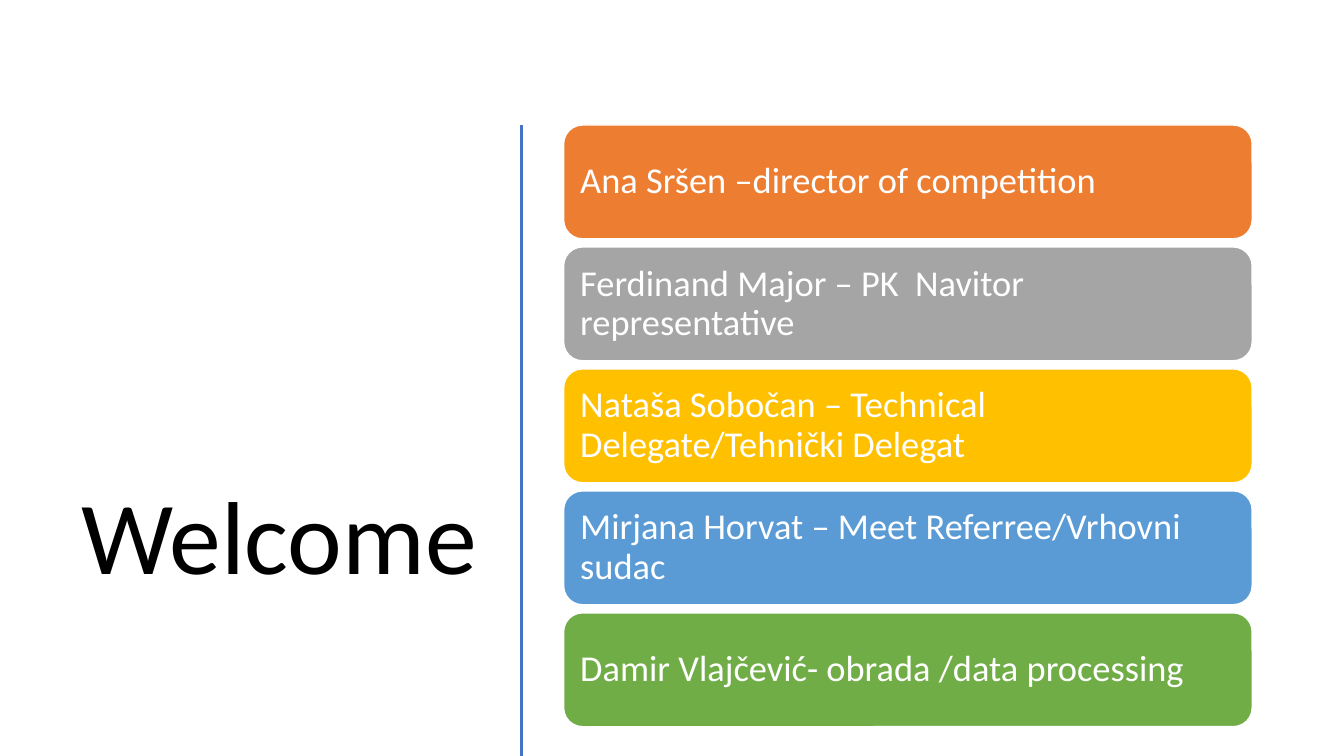
import pptx
import pptx.util
import pptx.dml.color
import pptx.enum.shapes
import pptx.enum.text
import pptx.oxml.ns
import lxml.etree

INK = {"black": "000000", "white": "FFFFFF", "rule": "4472C4",
       "orange": "ED7D31", "gray": "A5A5A5", "gold": "FFC000",
       "blue": "5B9BD5", "green": "70AD47"}
WIDE, HIGH = 13.33, 7.5
LEFT, TOP, BAR, TALL, PITCH = 5.59, 1.24, 6.83, 1.13, 1.21
STAFF = [("orange", "Ana Sršen –director of competition"),
         ("gray", "Ferdinand Major – PK  Navitor representative"),
         ("gold", "Nataša Sobočan – Technical Delegate/Tehnički Delegat"),
         ("blue", "Mirjana Horvat – Meet Referree/Vrhovni sudac"),
         ("green", "Damir Vlajčević- obrada /data processing")]


class Deck:
    """Draws styled elements on one slide, placed by shares of its size."""

    def __init__(self):
        self.font = "Calibri"
        self.file = pptx.Presentation()
        self.file.slide_width = pptx.util.Inches(WIDE)
        self.file.slide_height = pptx.util.Inches(HIGH)
        self.slide = self.file.slides.add_slide(self.file.slide_layouts[6])

    def span(self, *shares):
        sides = (self.file.slide_width, self.file.slide_height)
        return [round(s * sides[i % 2]) for i, s in enumerate(shares)]

    def tint(self, name):
        return pptx.dml.color.RGBColor.from_string(INK[name])

    def label(self, shape, text, size, color, align, pad):
        frame = shape.text_frame
        frame.word_wrap = True
        frame.vertical_anchor = pptx.enum.text.MSO_ANCHOR.MIDDLE
        frame.margin_left = frame.margin_right = pptx.util.Inches(pad)
        line = frame.paragraphs[0]
        line.alignment = align
        line.line_spacing = 0.9
        run = line.add_run()
        run.text = text
        run.font.name = self.font
        run.font.size = pptx.util.Pt(size)
        run.font.color.rgb = self.tint(color)

    def title(self, text, *area):
        box = self.slide.shapes.add_textbox(*self.span(*area))
        self.label(box, text, 74, "black", pptx.enum.text.PP_ALIGN.RIGHT, 0.1)

    def rule(self, *ends):
        kind = pptx.enum.shapes.MSO_CONNECTOR.STRAIGHT
        line = self.slide.shapes.add_connector(kind, *self.span(*ends))
        line.line.color.rgb = self.tint("rule")
        line.line.width = pptx.util.Pt(2)
        lxml.etree.SubElement(line._element.spPr, pptx.oxml.ns.qn("a:effectLst"))

    def bar(self, text, color, *area):
        kind = pptx.enum.shapes.MSO_SHAPE.ROUNDED_RECTANGLE
        bar = self.slide.shapes.add_shape(kind, *self.span(*area))
        bar.shadow.inherit = False
        bar.fill.solid()
        bar.fill.fore_color.rgb = self.tint(color)
        bar.line.color.rgb = self.tint("white")
        bar.line.width = pptx.util.Pt(1)
        self.label(bar, text, 26, "white", pptx.enum.text.PP_ALIGN.LEFT, 0.11)


def main():
    deck = Deck()
    deck.title("Welcome", 0.52 / WIDE, 4.74 / HIGH, 4.31 / WIDE, 1.26 / HIGH)
    deck.rule(5.17 / WIDE, TOP / HIGH, 5.17 / WIDE, 1)
    for row, (color, text) in enumerate(STAFF):
        deck.bar(text, color, LEFT / WIDE, (TOP + row * PITCH) / HIGH,
                 BAR / WIDE, TALL / HIGH)
    deck.file.save("out.pptx")


if __name__ == "__main__":
    main()
